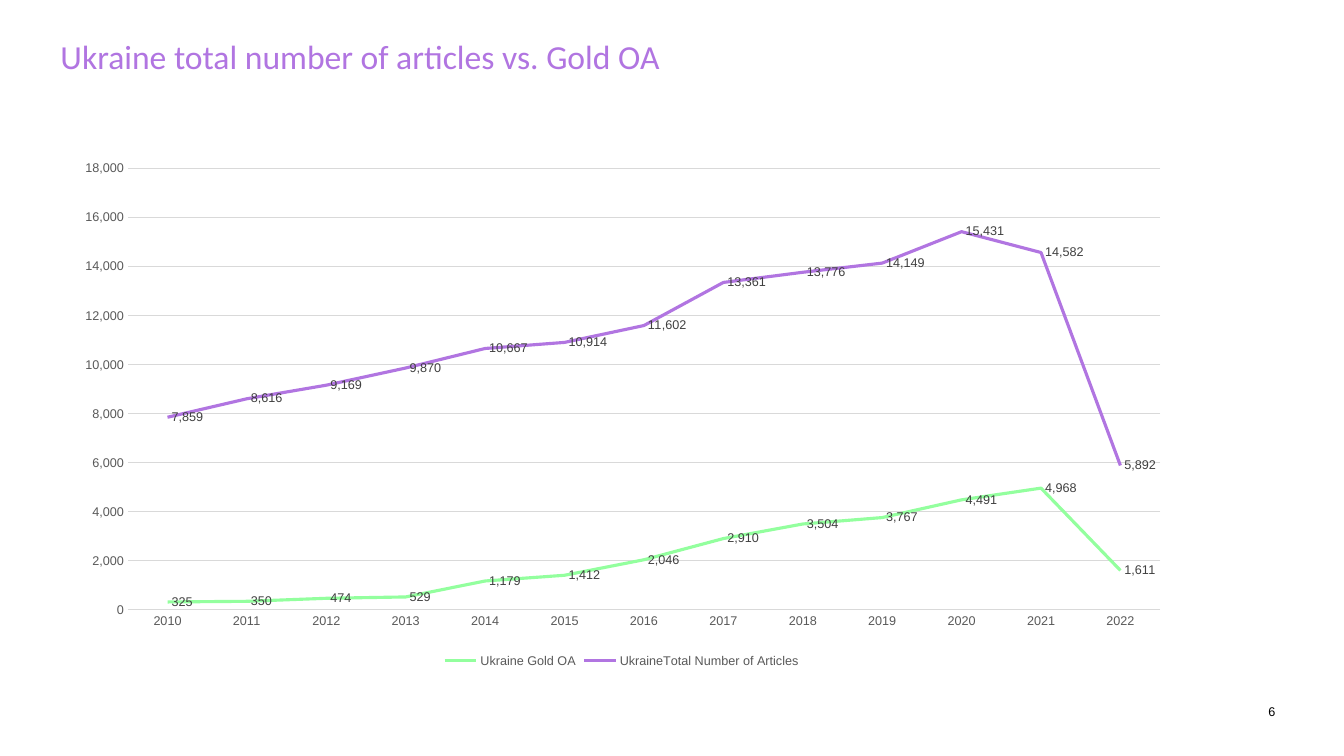
from typing import NamedTuple

from lxml.etree import SubElement
from pptx import Presentation
from pptx.chart.data import CategoryChartData
from pptx.chart.series import LineSeries
from pptx.dml.color import RGBColor
from pptx.enum.chart import (XL_CHART_TYPE, XL_LEGEND_POSITION,
                             XL_MARKER_STYLE, XL_TICK_MARK)
from pptx.enum.chart import XL_LABEL_POSITION
from pptx.enum.text import MSO_ANCHOR
from pptx.oxml.ns import qn
from pptx.util import Inches, Pt

GREEN, PURPLE, RULE, GREY, DARK = "93FF9E", "B175E1", "D9D9D9", "595959", "404040"


class Trend(NamedTuple):
    name: str
    color: str
    counts: list[int]


YEARS = [str(year) for year in range(2010, 2023)]
TRENDS = [
    Trend("Ukraine Gold OA", GREEN,
          [325, 350, 474, 529, 1179, 1412, 2046, 2910, 3504, 3767, 4491, 4968, 1611]),
    Trend("UkraineTotal Number of Articles", PURPLE,
          [7859, 8616, 9169, 9870, 10667, 10914, 11602, 13361, 13776, 14149,
           15431, 14582, 5892]),
]
PLOT = {"x": 0.06, "y": 0.03, "w": 0.92, "h": 0.85}


def tint(value: str) -> RGBColor:
    return RGBColor.from_string(value)


def style(font, size: float, color: str, face: str = "Arial") -> None:
    font.size, font.name = Pt(size), face
    font.color.rgb = tint(color)


def stroke(line, color: str, width: float = 0.75) -> None:
    line.color.rgb = tint(color)
    line.width = Pt(width)


def write(slide, text: str, box: tuple, *, size: float, color: str,
          face: str = "Arial", anchor=MSO_ANCHOR.TOP, pitch: float = 1.0) -> None:
    frame = slide.shapes.add_textbox(*map(Inches, box)).text_frame
    frame.word_wrap = True
    frame.vertical_anchor = anchor
    frame.margin_left = frame.margin_right = frame.margin_top = frame.margin_bottom = 0
    line = frame.paragraphs[0]
    line.line_spacing = pitch
    run = line.add_run()
    run.text = text
    style(run.font, size, color, face)


def place(chart) -> None:
    """Fix the inner plot area as fractions of the chart frame."""
    area = chart._chartSpace.chart.plotArea
    for old in area.findall(qn("c:layout")):
        area.remove(old)
    layout = SubElement(area, qn("c:layout"))
    area.insert(0, layout)
    manual = SubElement(layout, qn("c:manualLayout"))
    parts = {"layoutTarget": "inner", "xMode": "edge", "yMode": "edge", **PLOT}
    for tag, value in parts.items():
        SubElement(manual, qn(f"c:{tag}")).set("val", str(value))


def trace(series: LineSeries, trend: Trend) -> None:
    series.smooth = False
    series.marker.style = XL_MARKER_STYLE.NONE
    stroke(series.format.line, trend.color, 2.25)
    labels = series.data_labels
    labels.show_value = True
    labels.position = XL_LABEL_POSITION.RIGHT
    labels.number_format, labels.number_format_is_linked = "#,##0", False
    style(labels.font, 9, DARK)


def graph(slide, box: tuple) -> None:
    data = CategoryChartData(number_format="#,##0")
    data.categories = YEARS
    for trend in TRENDS:
        data.add_series(trend.name, trend.counts)
    chart = slide.shapes.add_chart(XL_CHART_TYPE.LINE, *map(Inches, box), data).chart
    chart.has_title = False
    style(chart.font, 10, "000000")
    chart.has_legend = True
    chart.legend.position = XL_LEGEND_POSITION.BOTTOM
    chart.legend.include_in_layout = False
    style(chart.legend.font, 9, GREY)

    years, counts = chart.category_axis, chart.value_axis
    for axis in (years, counts):
        axis.major_tick_mark = axis.minor_tick_mark = XL_TICK_MARK.NONE
        style(axis.tick_labels.font, 9, GREY)
    stroke(years.format.line, RULE)
    counts.format.line.fill.background()
    counts.has_major_gridlines = True
    stroke(counts.major_gridlines.format.line, RULE)
    counts.minimum_scale, counts.maximum_scale, counts.major_unit = 0, 18000, 2000
    counts.tick_labels.number_format = "#,##0"
    counts.tick_labels.number_format_is_linked = False

    chart.plots[0].vary_by_categories = False
    for series, trend in zip(chart.plots[0].series, TRENDS):
        trace(series, trend)
    place(chart)


def main() -> None:
    deck = Presentation()
    deck.slide_width, deck.slide_height = Inches(13.33), Inches(7.5)
    slide = deck.slides.add_slide(deck.slide_layouts[6])
    write(slide, "Ukraine total number of articles vs. Gold OA", (0.6, 0.4, 9.06, 0.28),
          size=24, color=PURPLE, face="Calibri", pitch=0.9)
    write(slide, "6", (12.58, 6.94, 0.24, 0.24), size=9, color="000000",
          anchor=MSO_ANCHOR.MIDDLE)
    graph(slide, (0.6, 1.52, 11.13, 5.15))
    deck.save("out.pptx")


if __name__ == "__main__":
    main()
